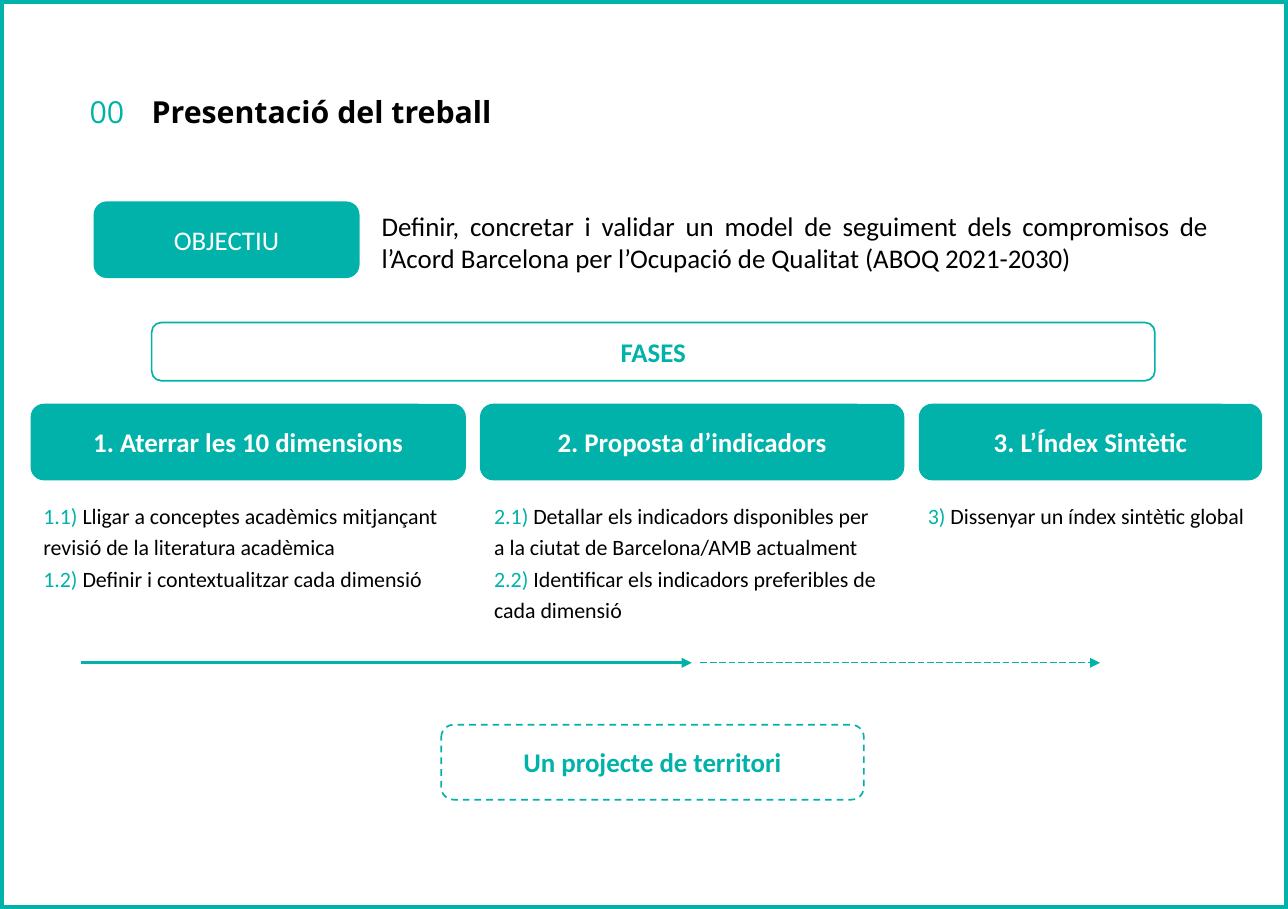
from pptx import Presentation
from pptx.dml.color import RGBColor
from pptx.enum.dml import MSO_LINE
from pptx.enum.shapes import MSO_CONNECTOR, MSO_SHAPE
from pptx.enum.text import MSO_ANCHOR, PP_ALIGN
from pptx.oxml.ns import qn
from pptx.util import Cm, Pt
from lxml import etree

TEAL, BLACK, WHITE = "00B2A9", "000000", "FFFFFF"
hex_color = RGBColor.from_string


def write(p, text, size=16, color=BLACK, bold=False, font="Calibri"):
    r = p.add_run()
    r.text = text
    r.font.name, r.font.size, r.font.bold = font, Pt(size), bold
    r.font.color.rgb = hex_color(color)


def add_box(x, y, w, h, text="", fill=None, width=1, dash=None,
            kind=MSO_SHAPE.ROUNDED_RECTANGLE, **fmt):
    """Add a teal-lined shape, filled or hollow, with a centred label."""
    sp = s.shapes.add_shape(kind, Cm(x), Cm(y), Cm(w), Cm(h))
    sp.shadow.inherit = False
    if fill:
        sp.fill.solid()
        sp.fill.fore_color.rgb = hex_color(fill)
    else:
        sp.fill.background()
    sp.line.color.rgb = hex_color(TEAL)
    sp.line.width = Pt(width)
    if dash:
        sp.line.dash_style = dash
    if text:
        tf = sp.text_frame
        tf.word_wrap = True
        tf.vertical_anchor = MSO_ANCHOR.MIDDLE
        p = tf.paragraphs[0]
        p.alignment = PP_ALIGN.CENTER
        write(p, text, **fmt)


prs = Presentation()
prs.slide_width, prs.slide_height = Cm(27), Cm(19.05)
s = prs.slides.add_slide(prs.slide_layouts[6])

# Heading
for x, w, text, color, bold in [
    (1.88, 1.04, "00", TEAL, False),
    (3.18, 10.08, "Presentació del treball", BLACK, True),
]:
    tf = s.shapes.add_textbox(Cm(x), Cm(1.83), Cm(w), Cm(0.99)).text_frame
    tf.word_wrap = True
    tf.vertical_anchor = MSO_ANCHOR.MIDDLE
    tf.margin_left = tf.margin_right = tf.margin_top = tf.margin_bottom = 0
    write(tf.paragraphs[0], text, size=18, color=color, bold=bold, font="Open Sans")

# Slide border
add_box(0, 0, 27, 19.05, width=5, kind=MSO_SHAPE.RECTANGLE)

# Objective
add_box(1.98, 4.24, 5.54, 1.57, "OBJECTIU", fill=TEAL, color=WHITE)
tf = s.shapes.add_textbox(Cm(7.75), Cm(4.27), Cm(17.83), Cm(1.63)).text_frame
tf.word_wrap = True
p = tf.paragraphs[0]
p.alignment = PP_ALIGN.JUSTIFY
write(p, "Definir, concretar i validar un model de seguiment dels compromisos de "
         "l’Acord Barcelona per l’Ocupació de Qualitat (ABOQ 2021-2030)")

# Phases: left and width of the header, left and width of its steps
add_box(3.18, 6.76, 21.03, 1.22, "FASES", color=TEAL, bold=True)
phases = [
    (0.66, 9.09, 0.66, 9.09, "1. Aterrar les 10 dimensions", [
        ("1.1) ", "Lligar a conceptes acadèmics mitjançant revisió de la literatura acadèmica"),
        ("1.2) ", "Definir i contextualitzar cada dimensió")]),
    (10.08, 8.86, 10.11, 8.66, "2. Proposta d’indicadors", [
        ("2.1) ", "Detallar els indicadors disponibles per a la ciutat de Barcelona/AMB actualment"),
        ("2.2) ", "Identificar els indicadors preferibles de cada dimensió")]),
    (19.28, 7.16, 19.2, 7.7, "3. L’Índex Sintètic", [
        ("3) ", "Dissenyar un índex sintètic global")]),
]
for x, w, steps_x, steps_w, title, steps in phases:
    add_box(x, 8.48, w, 1.57, title, fill=TEAL, color=WHITE, bold=True)
    tf = s.shapes.add_textbox(Cm(steps_x), Cm(10.29), Cm(steps_w), Cm(2.9)).text_frame
    tf.word_wrap = True
    for i, (number, step) in enumerate(steps):
        p = tf.add_paragraph() if i else tf.paragraphs[0]
        p.line_spacing = 1.2
        write(p, number, size=13, color=TEAL)
        write(p, step, size=13)

# Timeline arrows
for x1, x2, width, dash in [
    (1.7, 14.5, 2, None),
    (14.68, 23.06, 0.5, MSO_LINE.LONG_DASH),
]:
    arrow = s.shapes.add_connector(
        MSO_CONNECTOR.STRAIGHT, Cm(x1), Cm(13.89), Cm(x2), Cm(13.89))
    arrow.line.color.rgb = hex_color(TEAL)
    arrow.line.width = Pt(width)
    if dash:
        arrow.line.dash_style = dash
    etree.SubElement(arrow.line._get_or_add_ln(), qn("a:tailEnd"), type="triangle")
    etree.SubElement(arrow._element.spPr, qn("a:effectLst"))

add_box(9.25, 15.19, 8.86, 1.57, "Un projecte de territori",
        dash=MSO_LINE.DASH, color=TEAL, bold=True)

prs.save("out.pptx")
